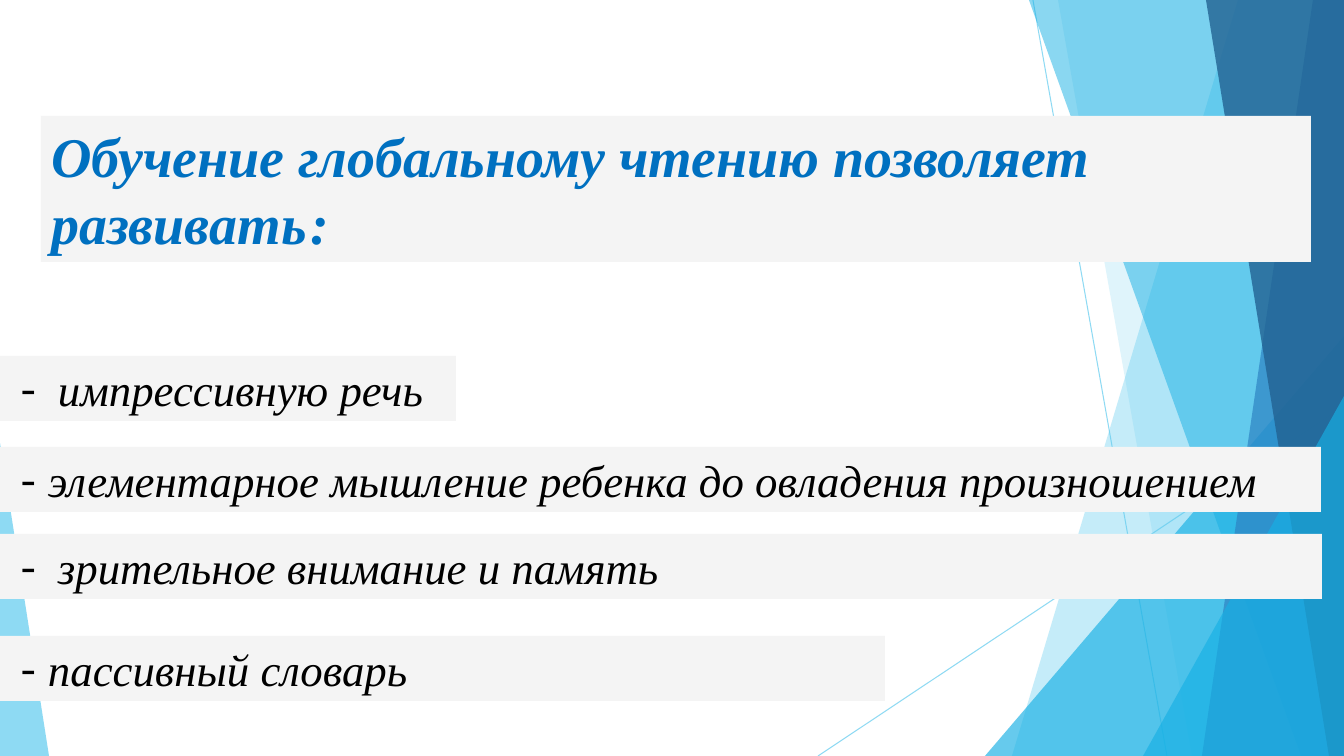
from dataclasses import dataclass

from lxml.etree import SubElement
from pptx import Presentation
from pptx.dml.color import RGBColor
from pptx.enum.shapes import MSO_CONNECTOR, MSO_SHAPE
from pptx.enum.text import MSO_ANCHOR, MSO_AUTO_SIZE, PP_ALIGN
from pptx.oxml.ns import qn
from pptx.util import Emu, Pt

EMU_PER_PX = 914400 / 100.8
WIDTH, HEIGHT = 1344, 756


@dataclass(frozen=True)
class Theme:
    """Colours, font and type sizes of the slide."""
    sky: str = "5FCBEF"
    cyan: str = "17B0E4"
    blue: str = "2E83C3"
    navy: str = "226292"
    panel: str = "F4F4F4"
    heading: str = "0070C0"
    ink: str = "000000"
    font: str = "Times New Roman"
    heading_size: int = 40
    item_size: int = 32
    gap_size: int = 12


def px(length):
    """Turn whole pixels into EMU."""
    return Emu(round(length * EMU_PER_PX))


class FacetSlide:
    """Draws the elements of one slide in a given theme."""

    def __init__(self, slide, theme):
        self.slide, self.shapes, self.theme = slide, slide.shapes, theme

    def paint(self, shape, color, opacity=100):
        """Fill a shape without outline or shadow."""
        shape.shadow.inherit = False
        shape.line.fill.background()
        self.tint(shape.fill, color, opacity)

    def tint(self, fill, color, opacity):
        """Set a solid colour with the given opacity in percent."""
        fill.solid()
        fill.fore_color.rgb = RGBColor.from_string(color)
        if opacity < 100:
            color_node = fill._xPr.find(qn("a:solidFill"))[0]
            SubElement(color_node, qn("a:alpha"), val=str(opacity * 1000))

    def ray(self, start, end):
        """Draw a thin translucent line."""
        ray = self.shapes.add_connector(
            MSO_CONNECTOR.STRAIGHT, *map(px, start + end))
        ray.line.width = Pt(0.75)
        self.tint(ray.line.fill, self.theme.sky, 70)
        SubElement(ray._element.spPr, qn("a:effectLst"))

    def band(self, top_x, bottom_x, color, opacity):
        """Draw a slanted band that reaches the right edge."""
        outline = self.shapes.build_freeform(top_x, 0, scale=EMU_PER_PX)
        outline.add_line_segments(
            [(WIDTH, 0), (WIDTH, HEIGHT), (bottom_x, HEIGHT)])
        self.paint(outline.convert_to_shape(), color, opacity)

    def corner(self, left, top, width, apex, color, opacity):
        """Draw a triangle that stands on the bottom edge."""
        corner = self.shapes.add_shape(
            MSO_SHAPE.ISOSCELES_TRIANGLE,
            *map(px, (left, top, width, HEIGHT - top)))
        corner.adjustments[0] = apex
        self.paint(corner, color, opacity)

    def set_text_style(self, paragraph, color, bold):
        """Give a paragraph the italic serif style."""
        paragraph.alignment = PP_ALIGN.LEFT
        font = paragraph.font
        font.name, font.italic, font.bold = self.theme.font, True, bold
        font.color.rgb = RGBColor.from_string(color)

    def heading(self, left, top, width, height, pieces):
        """Place the title in front, with a size for each piece of text."""
        heading = self.shapes.title
        self.shapes._spTree.append(heading._element)
        heading.left, heading.top, heading.width, heading.height = map(
            px, (left, top, width, height))
        self.tint(heading.fill, self.theme.panel, 100)
        frame = heading.text_frame
        frame.vertical_anchor = MSO_ANCHOR.MIDDLE
        frame.auto_size = MSO_AUTO_SIZE.NONE
        paragraph = frame.paragraphs[0]
        self.set_text_style(paragraph, self.theme.heading, True)
        for text, size in pieces:
            run = paragraph.add_run()
            run.text, run.font.size = text, Pt(size)

    def item(self, top, width, hanging, text):
        """Draw a panel from the left edge with one dashed list item."""
        panel = self.shapes.add_shape(
            MSO_SHAPE.RECTANGLE, *map(px, (0, top, width, 65)))
        self.paint(panel, self.theme.panel)
        frame = panel.text_frame
        frame.word_wrap = True
        frame.vertical_anchor = MSO_ANCHOR.MIDDLE
        frame.margin_left = px(21)
        paragraph = frame.paragraphs[0]
        paragraph.text = text
        self.set_text_style(paragraph, self.theme.ink, False)
        paragraph.font.size = Pt(self.theme.item_size)
        properties = paragraph._p.get_or_add_pPr()
        properties.set("marL", str(px(hanging)))
        properties.set("indent", str(-px(hanging)))
        bullet_font = SubElement(
            properties, qn("a:buFont"), typeface=self.theme.font)
        dash = SubElement(properties, qn("a:buChar"), char="-")
        properties.insert(0, bullet_font)
        properties.insert(1, dash)


def main():
    """Build the slide and save it."""
    theme = Theme()
    deck = Presentation()
    deck.slide_width, deck.slide_height = px(WIDTH), px(HEIGHT)
    page = FacetSlide(deck.slides.add_slide(deck.slide_layouts[5]), theme)

    page.ray((1033, 0), (1167, HEIGHT))
    page.ray((WIDTH, 406), (818, HEIGHT))
    page.band(1238, 1012, theme.sky, 36)
    page.band(1058, 1192, theme.sky, 20)
    page.corner(985, 336, 359, 1, theme.cyan, 66)
    page.band(1029, 1301, theme.cyan, 50)
    page.band(1313, 1202, theme.blue, 70)
    page.band(1206, 1329, theme.navy, 80)
    page.corner(1143, 396, 201, 1, theme.cyan, 66)
    page.corner(0, 443, 49, 0, theme.sky, 70)

    page.heading(41, 116, 1270, 146, [
        ("Обучение глобальному чтению позволяет развивать", theme.heading_size),
        (" ", theme.gap_size),
        (":", theme.heading_size),
    ])
    for top, width, hanging, text in [
        (356, 456, 37, "импрессивную речь"),
        (447, 1321, 27, "элементарное мышление ребенка до овладения произношением"),
        (534, 1322, 37, "зрительное внимание и память"),
        (636, 885, 27, "пассивный словарь"),
    ]:
        page.item(top, width, hanging, text)

    deck.save("out.pptx")


if __name__ == "__main__":
    main()
